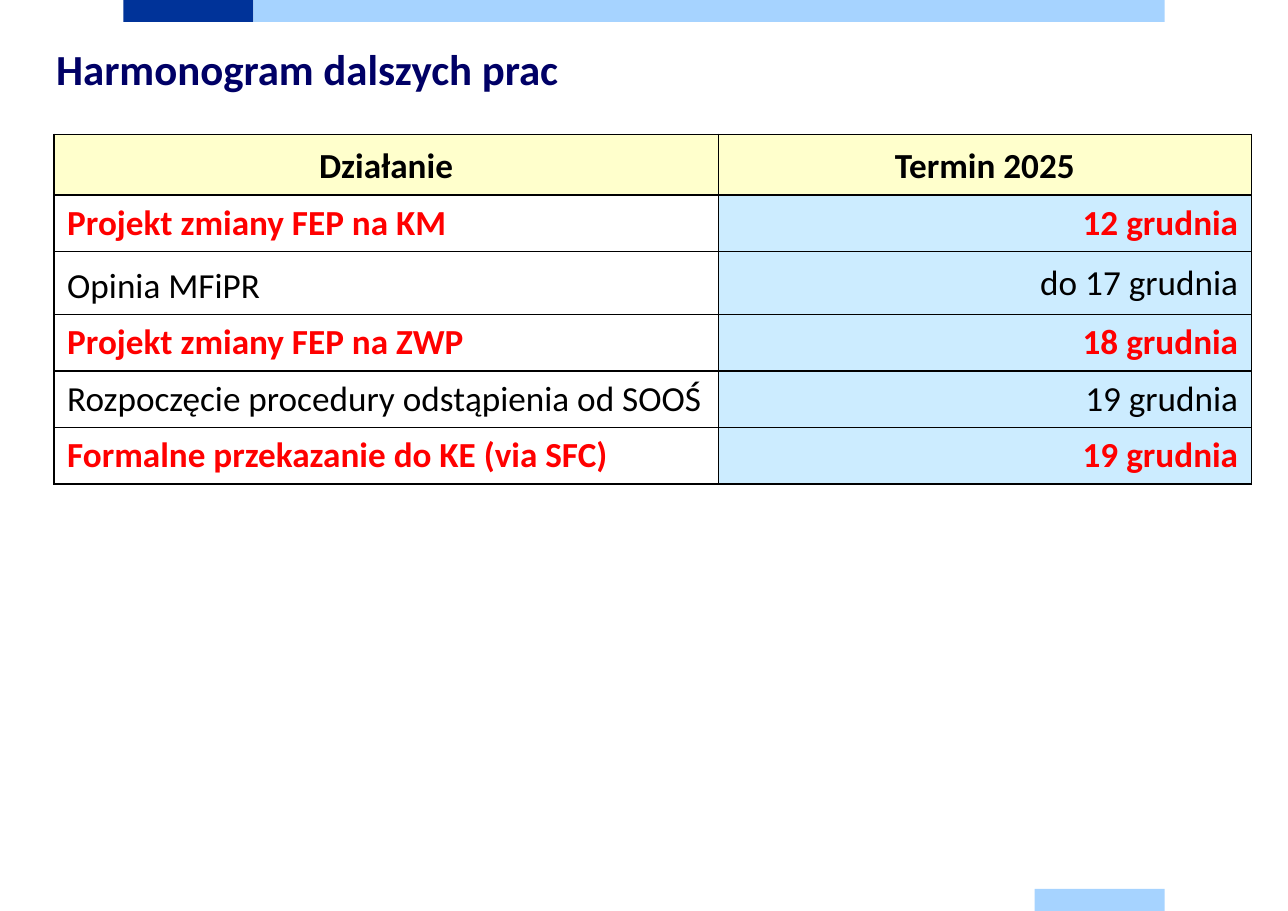
from lxml import etree
from pptx import Presentation
from pptx.dml.color import RGBColor
from pptx.enum import shapes, text
from pptx.oxml import ns
from pptx.util import Pt


def color(value):
    return RGBColor.from_string(value)


def add_text(paragraph, content, size, value, bold):
    run = paragraph.add_run()
    run.text = content
    run.font.name = "Calibri"
    run.font.size = Pt(size)
    run.font.bold = bold
    run.font.color.rgb = color(value)


presentation = Presentation()
presentation.slide_width = Pt(841.68)
presentation.slide_height = Pt(595.44)
slide = presentation.slides.add_slide(presentation.slide_layouts[5])

bars = [
    (80.64, 0, 84.96, "003399"),
    (165.6, 0, 595.44, "A6D3FF"),
    (676.08, 581.04, 84.96, "A6D3FF"),
]
for left, top, width, fill in bars:
    bar = slide.shapes.add_shape(
        shapes.MSO_SHAPE.RECTANGLE, Pt(left), Pt(top), Pt(width), Pt(14.4)
    )
    bar.shadow.inherit = False
    bar.fill.solid()
    bar.fill.fore_color.rgb = color(fill)
    bar.line.fill.background()

title = slide.shapes.title
title.left, title.top, title.width, title.height = Pt(29.52), Pt(25.2), Pt(722.16), Pt(39.6)
title.text_frame.auto_size = text.MSO_AUTO_SIZE.NONE
title.text_frame.vertical_anchor = text.MSO_ANCHOR.MIDDLE
paragraph = title.text_frame.paragraphs[0]
paragraph.alignment = text.PP_ALIGN.LEFT
add_text(paragraph, "Harmonogram dalszych prac", 28, "000066", True)

RED, BLACK = "FF0000", "000000"
schedule = [
    ("Działanie", "Termin 2025", BLACK, True, 39.6),
    ("Projekt zmiany FEP na KM", "12 grudnia", RED, True, 37),
    ("Opinia MFiPR", "do 17 grudnia", BLACK, False, 41.2),
    ("Projekt zmiany FEP na ZWP", "18 grudnia", RED, True, 36.9),
    ("Rozpoczęcie procedury odstąpienia od SOOŚ", "19 grudnia", BLACK, False, 36.9),
    ("Formalne przekazanie do KE (via SFC)", "19 grudnia", RED, True, 36.9),
]
line_spacing = {(0, 0): 1.1, (0, 1): 1.1, (2, 0): 1.15}

frame = slide.shapes.add_table(
    len(schedule), 2, Pt(35.28), Pt(87.84), Pt(782.64), Pt(228.5)
)
table = frame.table
table.horz_banding = False
table.columns[0].width = Pt(434.16)
table.columns[1].width = Pt(348.48)

for row, (action, deadline, value, bold, height) in enumerate(schedule):
    table.rows[row].height = Pt(height)
    for column, content in enumerate((action, deadline)):
        cell = table.cell(row, column)
        cell.margin_left = cell.margin_right = Pt(8.64)
        cell.margin_top = cell.margin_bottom = Pt(4.32)
        cell.vertical_anchor = text.MSO_ANCHOR.MIDDLE

        properties = cell._tc.get_or_add_tcPr()
        for side in ("lnL", "lnR", "lnT", "lnB"):
            border = etree.SubElement(properties, ns.qn(f"a:{side}"), w=str(Pt(1)))
            solid = etree.SubElement(border, ns.qn("a:solidFill"))
            etree.SubElement(solid, ns.qn("a:srgbClr"), val=BLACK)

        if row == 0 or column == 1:
            cell.fill.solid()
            cell.fill.fore_color.rgb = color("FFFFCC" if row == 0 else "CCECFF")
        else:
            cell.fill.background()

        paragraph = cell.text_frame.paragraphs[0]
        paragraph.line_spacing = line_spacing.get((row, column), 1.0)
        if row == 0:
            paragraph.alignment = text.PP_ALIGN.CENTER
        else:
            paragraph.alignment = (text.PP_ALIGN.LEFT, text.PP_ALIGN.RIGHT)[column]
        add_text(paragraph, content, 23, value, bold)

presentation.save("out.pptx")
